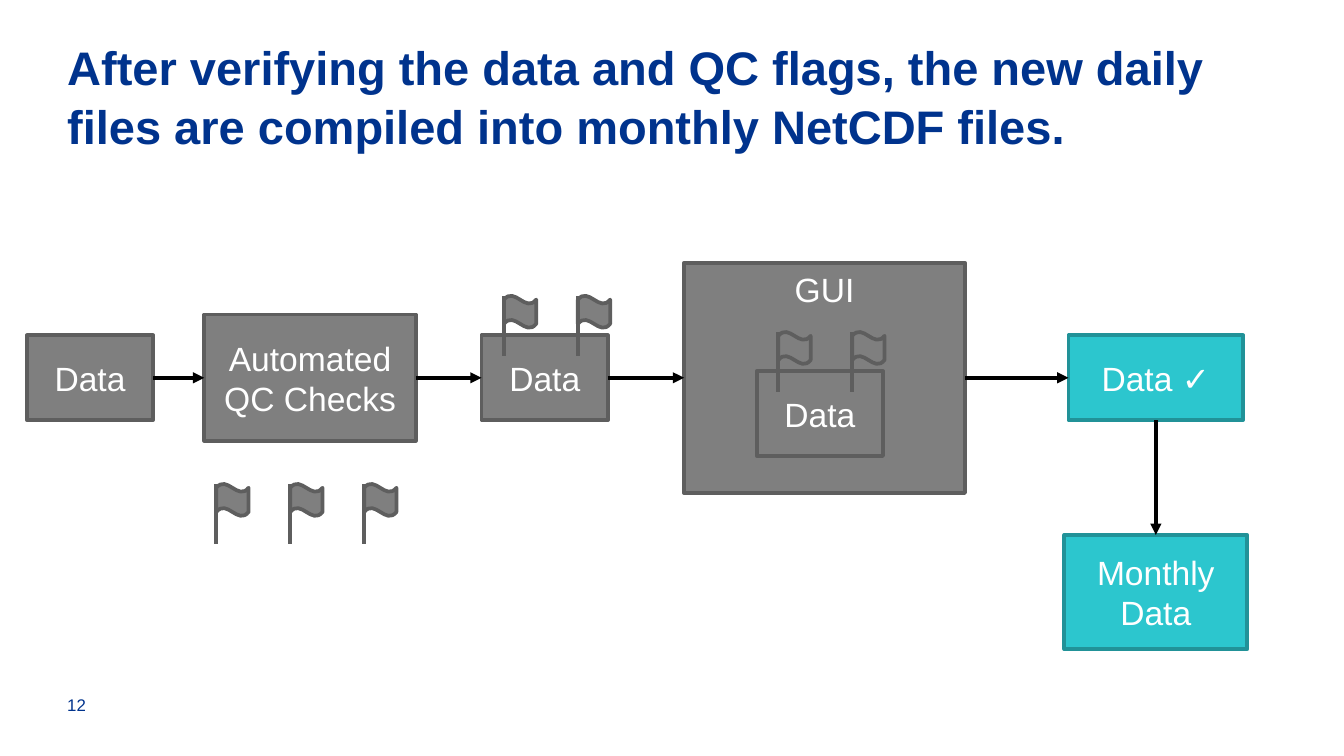
from lxml import etree
from pptx import Presentation
from pptx.dml.color import RGBColor
from pptx.enum.shapes import MSO_CONNECTOR as CONN, MSO_SHAPE as SHAPE
from pptx.enum.text import MSO_ANCHOR as ANCHOR, PP_ALIGN as ALIGN
from pptx.oxml.ns import qn
from pptx.util import Pt

GRAY, GRAY_EDGE = "7F7F7F", "5E5E5E"
TEAL, TEAL_EDGE = "2CC6CE", "219298"
NAVY, WHITE, BLACK = "00338D", "FFFFFF", "000000"
AXIS = 202.4
DATA_W, DATA_H = 67.7, 45.4
FLAG_SIZE, POLE_H, FLAG_STEP = 17.3, 32.4, 39.6


def color(value):
    return RGBColor.from_string(value)


def style_text(tf, size, hue, bold=False, align=ALIGN.LEFT):
    for p in tf.paragraphs:
        p.alignment = align
        for r in p.runs:
            r.font.name = "Arial"
            r.font.size = Pt(size)
            r.font.bold = bold
            r.font.color.rgb = color(hue)


def add_text(s, text, x, y, w, h, size, anchor, bold=False):
    tf = s.shapes.add_textbox(Pt(x), Pt(y), Pt(w), Pt(h)).text_frame
    tf.word_wrap = True
    tf.margin_left = tf.margin_right = tf.margin_top = tf.margin_bottom = 0
    tf.vertical_anchor = anchor
    tf.text = text
    style_text(tf, size, NAVY, bold)
    return tf


def add_filled(s, kind, x, y, w, h, fill=GRAY, edge=GRAY_EDGE):
    sp = s.shapes.add_shape(kind, Pt(x), Pt(y), Pt(w), Pt(h))
    sp.shadow.inherit = False
    sp.fill.solid()
    sp.fill.fore_color.rgb = color(fill)
    sp.line.color.rgb = color(edge)
    sp.line.width = Pt(2)
    return sp


def add_box(s, text, x, mid, w, h, fill=GRAY, edge=GRAY_EDGE, anchor=ANCHOR.MIDDLE):
    sp = add_filled(s, SHAPE.RECTANGLE, x, mid - h / 2, w, h, fill, edge)
    tf = sp.text_frame
    tf.word_wrap = True
    tf.vertical_anchor = anchor
    tf.text = text
    style_text(tf, 18, WHITE, align=ALIGN.CENTER)
    return sp


def add_line(s, x1, y1, x2, y2, hue):
    line = s.shapes.add_connector(CONN.STRAIGHT, Pt(x1), Pt(y1), Pt(x2), Pt(y2))
    line.line.color.rgb = color(hue)
    line.line.width = Pt(2)
    etree.SubElement(line._element.spPr, qn("a:effectLst"))
    return line


def add_arrow(s, start, start_side, end, end_side):
    arrow = add_line(s, 0, 0, 0, 0, BLACK)
    arrow.begin_connect(start, start_side)
    arrow.end_connect(end, end_side)
    ln = arrow.line._get_or_add_ln()
    etree.SubElement(ln, qn("a:tailEnd"), type="triangle")


def add_flags(s, x, y, count):
    for i in range(count):
        left = x + i * FLAG_STEP
        add_filled(s, SHAPE.WAVE, left, y, FLAG_SIZE, FLAG_SIZE)
        add_line(s, left, y, left, y + POLE_H, GRAY_EDGE)


def main():
    prs = Presentation()
    prs.slide_width, prs.slide_height = Pt(720), Pt(405)
    s = prs.slides.add_slide(prs.slide_layouts[6])

    title = add_text(
        s,
        "After verifying the data and QC flags, the new daily files are "
        "compiled into monthly NetCDF files.",
        36, 32.4, 650.2, 36.7, 25.2, ANCHOR.MIDDLE, bold=True,
    )
    title.paragraphs[0].line_spacing = 1.04
    add_text(s, "12", 36, 361.4, 46, 21.6, 9, ANCHOR.BOTTOM)

    raw = add_box(s, "Data", 14.4, AXIS, DATA_W, DATA_H)
    checks = add_box(s, "Automated QC Checks", 109.4, AXIS, 113.4, 67.7)
    add_flags(s, 115.9, 259.2, 3)
    flagged = add_box(s, "Data", 258, AXIS, DATA_W, DATA_H)
    add_flags(s, 270, 158.4, 2)
    gui = add_box(s, "GUI", 366.5, AXIS, 150.5, 123.4, anchor=ANCHOR.TOP)
    add_box(s, "Data", 405.4, 221.6, DATA_W, DATA_H)
    add_flags(s, 417, 177.8, 2)
    verified = add_box(s, "Data ✓", 572.4, AXIS, 93.6, DATA_H, TEAL, TEAL_EDGE)
    monthly = add_box(s, "Monthly Data", 570.2, 317.2, 98, 61.2, TEAL, TEAL_EDGE)

    chain = [raw, checks, flagged, gui, verified]
    for start, end in zip(chain, chain[1:]):
        add_arrow(s, start, 3, end, 1)
    add_arrow(s, verified, 2, monthly, 0)

    prs.save("out.pptx")


if __name__ == "__main__":
    main()
